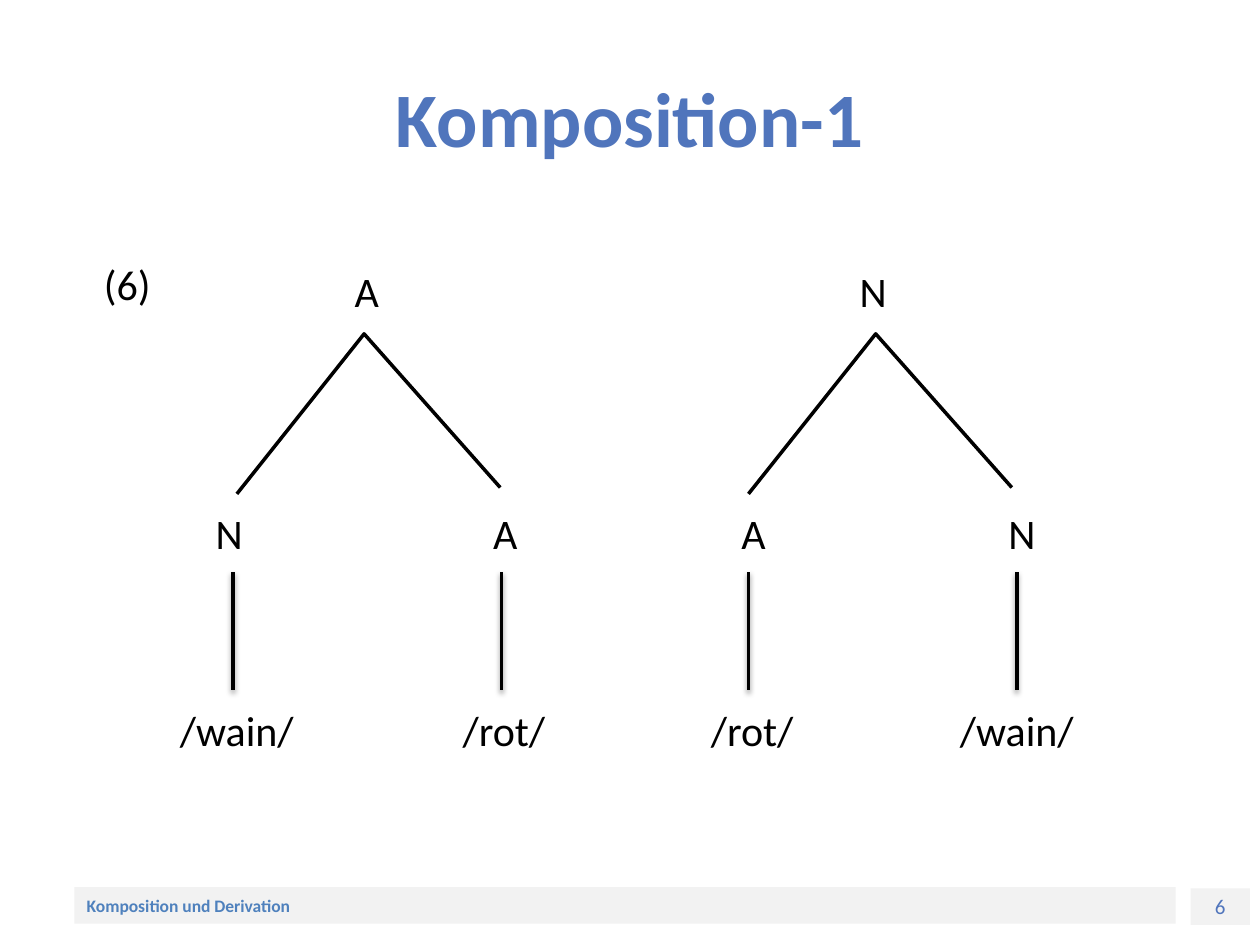
from dataclasses import dataclass
from lxml import etree
from pptx import Presentation
from pptx.dml.color import RGBColor as RGB
from pptx.enum.shapes import MSO_CONNECTOR as Conn, MSO_SHAPE as Kind
from pptx.enum.text import MSO_ANCHOR as Anchor, PP_ALIGN as Align
from pptx.oxml.ns import qn
from pptx.util import Inches, Pt


@dataclass(frozen=True)
class Theme:
    font: str = "Calibri"
    ink: str = "000000"
    blue: str = "5075BC"
    foot: str = "4F81BD"
    bar: str = "F2F2F2"
    head: int = 44
    node: int = 24
    page: int = 12
    note: int = 10
    line: int = 2


LOOK = Theme()


def write(shape, text, size=LOOK.node, color=LOOK.ink, bold=False,
          align=Align.CENTER, wrap=True):
    frame = shape.text_frame
    frame.word_wrap = wrap
    frame.vertical_anchor = Anchor.MIDDLE
    para = frame.paragraphs[0]
    para.alignment = align
    run = para.add_run()
    run.text = text
    font = run.font
    font.name, font.size, font.bold = LOOK.font, Pt(size), bold
    font.color.rgb = RGB.from_string(color)


def label(slide, text, mid, top, width=0.55, height=0.63):
    box = slide.shapes.add_textbox(
        Inches(mid - width / 2), Inches(top), Inches(width), Inches(height))
    box.text_frame.margin_left = box.text_frame.margin_right = 0
    write(box, text, wrap=False)


def stroke(shape):
    shape.line.color.rgb = RGB.from_string(LOOK.ink)
    shape.line.width = Pt(LOOK.line)


def shade(shape):
    props = shape._element.spPr
    group = etree.SubElement(props, qn("a:effectLst"))
    outer = etree.SubElement(
        group, qn("a:outerShdw"), blurRad=str(Pt(3.1)), dist=str(Pt(1.6)),
        dir="5400000", rotWithShape="0")
    tint = etree.SubElement(outer, qn("a:srgbClr"), val=LOOK.ink)
    etree.SubElement(tint, qn("a:alpha"), val="38000")


def stem(slide, x, top, end):
    line = slide.shapes.add_connector(
        Conn.STRAIGHT, Inches(x), Inches(top), Inches(x), Inches(end))
    stroke(line)
    shade(line)


def fork(slide, left, top):
    path = slide.shapes.build_freeform(Inches(left), Inches(top + 1.27))
    path.add_line_segments(
        [(Inches(left + 1.01), Inches(top)),
         (Inches(left + 2.09), Inches(top + 1.22))], close=False)
    shape = path.convert_to_shape()
    shape.fill.background()
    shape.shadow.inherit = False
    stroke(shape)


def tree(slide, left, top, root, leaves):
    text, mid = root
    label(slide, text, left + mid, top)
    fork(slide, left, top + 0.66)
    for text, mid, bar, word, base in leaves:
        label(slide, text, left + mid, top + 1.92)
        stem(slide, left + bar, top + 2.55, top + 3.49)
        label(slide, word, left + base, top + 3.57, width=1, height=0.46)


def title(slide, text, left, top, width, height):
    box = slide.shapes.title
    box.left, box.top = Inches(left), Inches(top)
    box.width, box.height = Inches(width), Inches(height)
    write(box, text, size=LOOK.head, color=LOOK.blue, bold=True)


def strip(slide, text, left, top, width, height, **style):
    bar = slide.shapes.add_shape(
        Kind.RECTANGLE, Inches(left), Inches(top), Inches(width), Inches(height))
    bar.fill.solid()
    bar.fill.fore_color.rgb = RGB.from_string(LOOK.bar)
    bar.line.fill.background()
    bar.shadow.inherit = False
    write(bar, text, **style)


def main():
    deck = Presentation()
    deck.slide_width, deck.slide_height = Inches(10), Inches(7.5)
    slide = deck.slides.add_slide(deck.slide_layouts[5])
    strip(slide, "6", 9.45, 7.05, 0.47, 0.29, size=LOOK.page, color=LOOK.blue)
    strip(slide, "Komposition und Derivation", 0.59, 7.04, 8.74, 0.29,
          size=LOOK.note, color=LOOK.foot, bold=True, align=Align.LEFT)
    title(slide, "Komposition-1", 0.5, 0.3, 9, 1.25)
    label(slide, "(6)", 1.01, 2.02, width=1, height=0.46)
    tree(slide, 1.88, 1.99, ("Α", 1.03), [
        ("N", -0.06, -0.03, "/wain/", 0),
        ("Α", 2.13, 2.1, "/rot/", 2.12)])
    tree(slide, 5.94, 1.99, ("N", 0.99), [
        ("Α", 0.04, 0, "/rot/", 0.03),
        ("N", 2.17, 2.13, "/wain/", 2.13)])
    deck.save("out.pptx")


if __name__ == "__main__":
    main()
